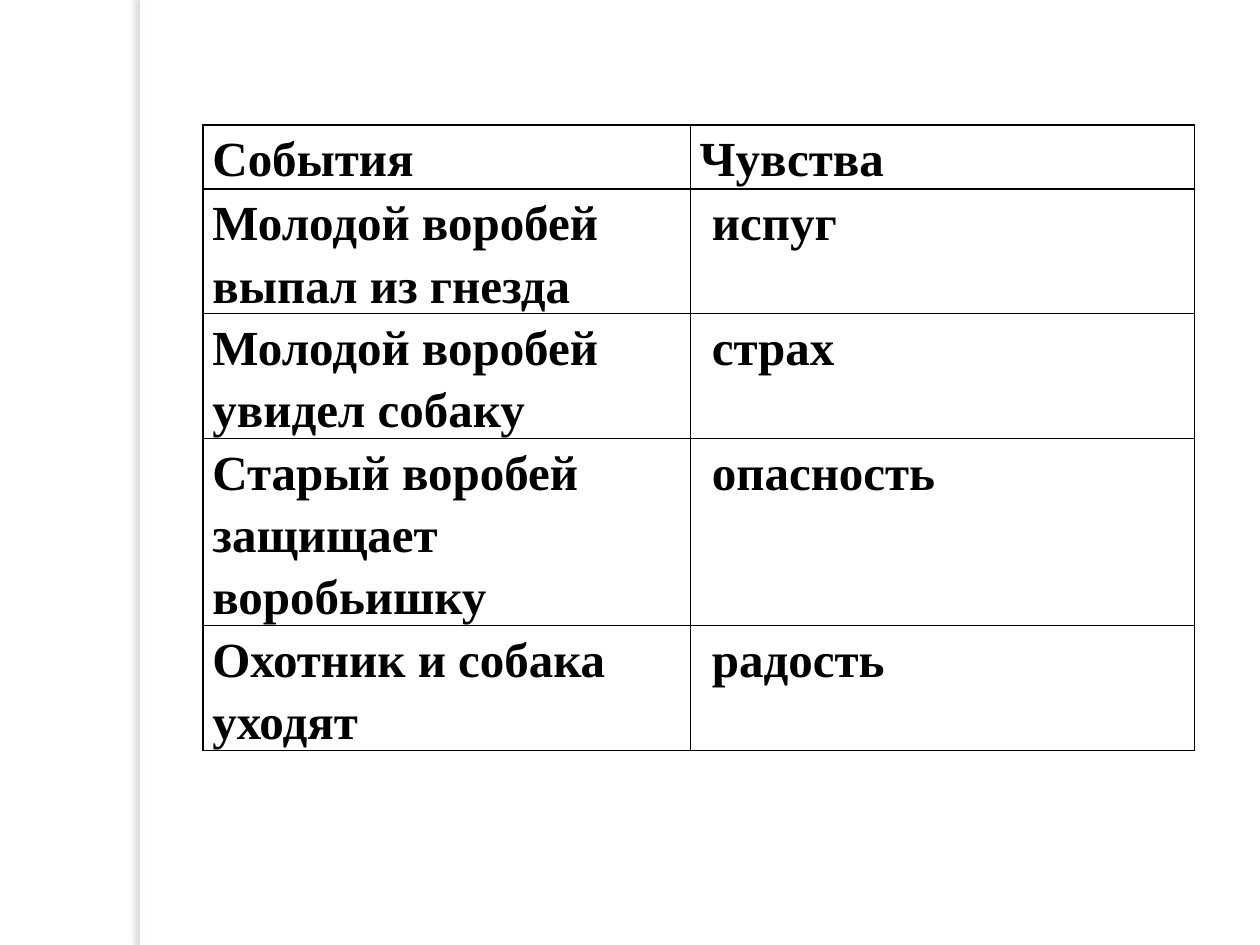
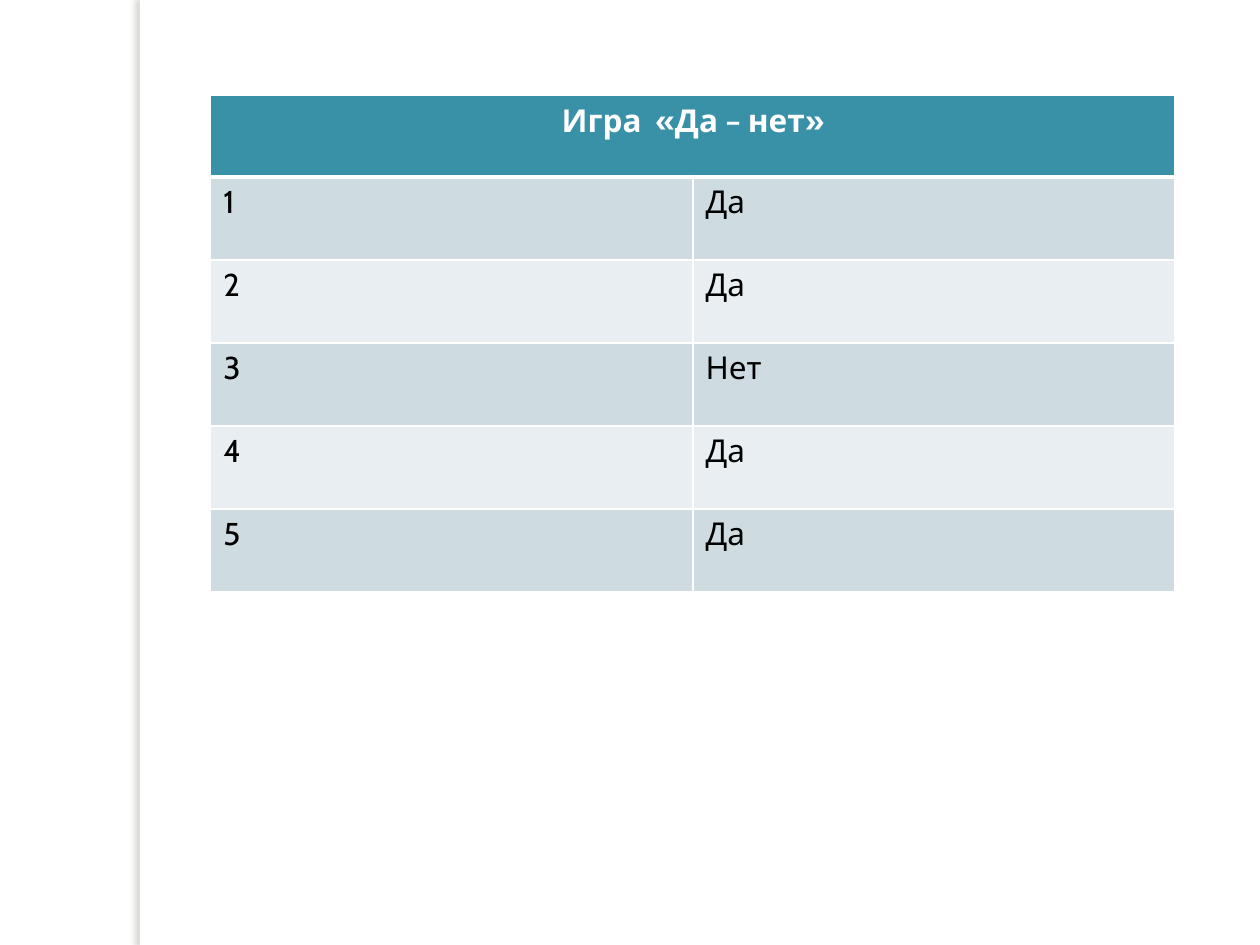
"""Builds two table slides about the sparrow story."""
import lxml.etree
import pptx
import pptx.dml.color
import pptx.enum.shapes
import pptx.enum.text
import pptx.oxml.ns
import pptx.util

Pt = pptx.util.Pt
qn = pptx.oxml.ns.qn
BLACK, WHITE, TEAL = "000000", "FFFFFF", "3891A7"
BANDS = ["CEDCE1", "E8EEF1"]


def tint(text):
    return pptx.dml.color.RGBColor.from_string(text)


def write(cell, text, font="Cabin", size=18, color=BLACK, bold=False,
          align=None, space=None, pad=(7.2, 3.6), fill=None, edge=WHITE, base=1):
    """Fill one cell with formatted text, edges and a background."""
    part = cell.text_frame.paragraphs[0]
    part.alignment, part.line_spacing = align, space
    run = part.add_run()
    run.text = text
    run.font.name, run.font.size, run.font.bold = font, Pt(size), bold
    run.font.color.rgb = tint(color)
    cell.margin_left = cell.margin_right = Pt(pad[0])
    cell.margin_top = cell.margin_bottom = Pt(pad[1])
    props = cell._tc.get_or_add_tcPr()
    for side in "LRTB":
        width = Pt(base if side == "B" else 1)
        line = lxml.etree.SubElement(props, qn("a:ln" + side), w=str(width))
        solid = lxml.etree.SubElement(line, qn("a:solidFill"))
        lxml.etree.SubElement(solid, qn("a:srgbClr"), val=edge)
    if fill:
        cell.fill.solid()
        cell.fill.fore_color.rgb = tint(fill)
    else:
        cell.fill.background()


deck = pptx.Presentation()
deck.slide_width, deck.slide_height = Pt(720), Pt(540)
blank = deck.slide_layouts[6]
blank.background.fill.solid()
blank.background.fill.fore_color.rgb = tint(WHITE)
first, second = [deck.slides.add_slide(blank) for _ in range(2)]

spine = first.shapes.add_shape(
    pptx.enum.shapes.MSO_SHAPE.RECTANGLE, Pt(80), 0, Pt(5.5), Pt(540))
spine.fill.solid()
spine.fill.fore_color.rgb = tint(WHITE)
spine.line.fill.background()
spine.shadow.inherit = False
glow = lxml.etree.SubElement(
    spine._element.spPr.find(qn("a:effectLst")), qn("a:outerShdw"),
    blurRad=str(Pt(3)), dist=str(Pt(3)), dir="10800000", algn="tl", rotWithShape="0")
shade = lxml.etree.SubElement(glow, qn("a:srgbClr"), val="736F63")
lxml.etree.SubElement(shade, qn("a:alpha"), val="25000")
blank.shapes.element.append(spine._element)

events = [
    ("События", "Чувства"),
    ("Молодой воробей выпал из гнезда", " испуг"),
    ("Молодой воробей увидел собаку", " страх"),
    ("Старый воробей защищает воробьишку", " опасность"),
    ("Охотник и собака уходят", " радость"),
]
game = [("Игра  «Да – нет»", "")] + [
    (str(num), word) for num, word in enumerate(["Да", "Да", "Нет", "Да", "Да"], 1)]

grids = []
for slide, rows, left, top, wides, highs in [
    (first, events, 116, 71.5, [278.5, 288], [36.5, 71.3, 71.3, 107, 71.3]),
    (second, game, 120.4, 54.6, [275.6, 275.6], [46.6] + [47.4] * 5),
]:
    grid = slide.shapes.add_table(
        len(rows), 2, Pt(left), Pt(top), Pt(sum(wides)), Pt(sum(highs))).table
    grid.first_row = grid.horz_banding = False
    for col, wide in zip(grid.columns, wides):
        col.width = Pt(wide)
    for row, high in zip(grid.rows, highs):
        row.height = Pt(high)
    grids.append(grid)

for y, row in enumerate(events):
    for x, text in enumerate(row):
        write(grids[0].cell(y, x), text, font="Times New Roman", size=28, bold=True,
              space=1.15, pad=(5.4, 0), edge=BLACK)

head = grids[1].cell(0, 0)
head.merge(grids[1].cell(0, 1))
write(head, game[0][0], color=WHITE, bold=True, fill=TEAL, base=3,
      align=pptx.enum.text.PP_ALIGN.CENTER)
for y, row in enumerate(game[1:], 1):
    for x, text in enumerate(row):
        write(grids[1].cell(y, x), text, fill=BANDS[(y - 1) % 2])

deck.save("out.pptx")
